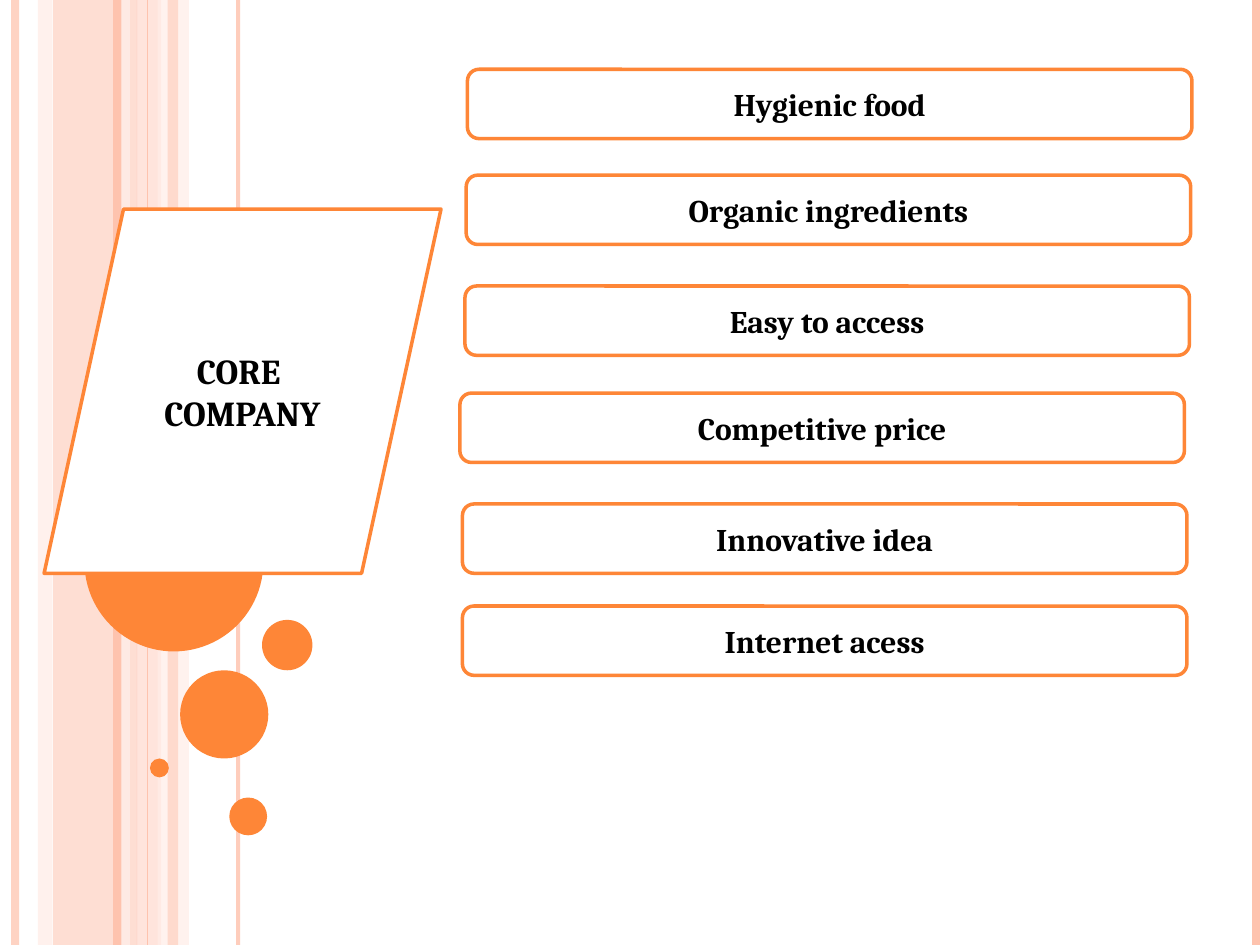
"""Build a slide with a core company panel and its six strengths."""
from lxml import etree
from pptx import Presentation
from pptx import util as u
from pptx.dml.color import RGBColor
from pptx.enum import shapes, text
from pptx.oxml.ns import qn

ORANGE, PEACH, ROSE, BLUSH, WHITE = "FE8637", "FEC3AE", "FFD9CE", "FFEDE8", "FFFFFF"

presentation = Presentation()
presentation.slide_width, presentation.slide_height = u.Inches(10), u.Inches(7.5)
slide = presentation.slides.add_slide(presentation.slide_layouts[6])
column = presentation.slide_width / 100
row = presentation.slide_height / 75


def paint(shape, fill, color, opacity=100):
    """Give a fill of the shape a solid colour and an opacity in percent."""
    fill.solid()
    fill.fore_color.rgb = RGBColor.from_string(color)
    if opacity < 100:
        node = shape.element.xpath(".//a:srgbClr")[-1]
        etree.SubElement(node, qn("a:alpha")).set("val", str(opacity * 1000))


def write(shape, wording, size=18, font="Cambria", color="000000", bold=True):
    """Frame the shape in orange and write centred lines of text in it."""
    shape.shadow.inherit = False
    paint(shape, shape.fill, WHITE)
    paint(shape, shape.line.fill, ORANGE)
    shape.line.width = u.Pt(2)
    frame = shape.text_frame
    frame.word_wrap = True
    frame.vertical_anchor = text.MSO_ANCHOR.MIDDLE
    frame.text = wording
    for paragraph in frame.paragraphs:
        paragraph.alignment = text.PP_ALIGN.CENTER
        for run in paragraph.runs:
            run.font.name, run.font.size, run.font.bold = font, u.Pt(size), bold
            paint(shape, run.font.fill, color)


bands = [
    (4.2, 6.7, PEACH, 54),
    (3, 1.15, ROSE, 36),
    (10.8, 2, ROSE, 70),
    (12.5, 2.5, BLUSH, 71),
    (13.3, 0.85, PEACH, 51),
]
for left, width, color, opacity in bands:
    band = slide.shapes.add_shape(
        shapes.MSO_SHAPE.RECTANGLE, int(left * column), 0, int(width * column), int(75 * row))
    band.shadow.inherit = False
    band.line.fill.background()
    paint(band, band.fill, color, opacity)

stripes = [
    (1.2, 4.5, PEACH, 73),
    (10, 4.5, BLUSH, 83),
    (9.3, 4.5, PEACH, 100),
    (18.9, 2.25, PEACH, 82),
    (11.7, 0.75, PEACH, 100),
    (99.7, 4.5, PEACH, 100),
]
for left, width, color, opacity in stripes:
    stripe = slide.shapes.add_connector(
        shapes.MSO_CONNECTOR.STRAIGHT, int(left * column), 0, int(left * column), int(75 * row))
    stripe.line.width = u.Pt(width)
    paint(stripe, stripe.line.fill, color, opacity)
    etree.SubElement(stripe.element.spPr, qn("a:effectLst"))

bubbles = [(6.7, 37.5, 14.2), (14.3, 53.2, 7), (11.9, 60.2, 1.5), (18.2, 63.3, 3), (20.8, 49.2, 4)]
for left, top, size in bubbles:
    bubble = slide.shapes.add_shape(
        shapes.MSO_SHAPE.OVAL, int(left * column), int(top * row), int(size * column), int(size * row))
    bubble.shadow.inherit = False
    bubble.line.fill.background()
    paint(bubble, bubble.fill, ORANGE)

core = slide.shapes.add_shape(
    shapes.MSO_SHAPE.FLOWCHART_DATA,
    int(3.5 * column), int(16.6 * row), int(31.5 * column), int(28.9 * row))
write(core, "CORE \nCOMPANY", size=20)

strengths = [
    (37.1, 5.5, "Hygienic food"),
    (37, 13.9, "Organic ingredients"),
    (36.9, 22.7, "Easy to access"),
    (36.5, 31.2, "Competitive price"),
    (36.7, 40, "Innovative idea"),
    (36.7, 48.1, "Internet acess"),
]
for left, top, wording in strengths:
    strength = slide.shapes.add_shape(
        shapes.MSO_SHAPE.ROUNDED_RECTANGLE,
        int(left * column), int(top * row), int(57.5 * column), int(5.5 * row))
    write(strength, wording)

presentation.save("out.pptx")
